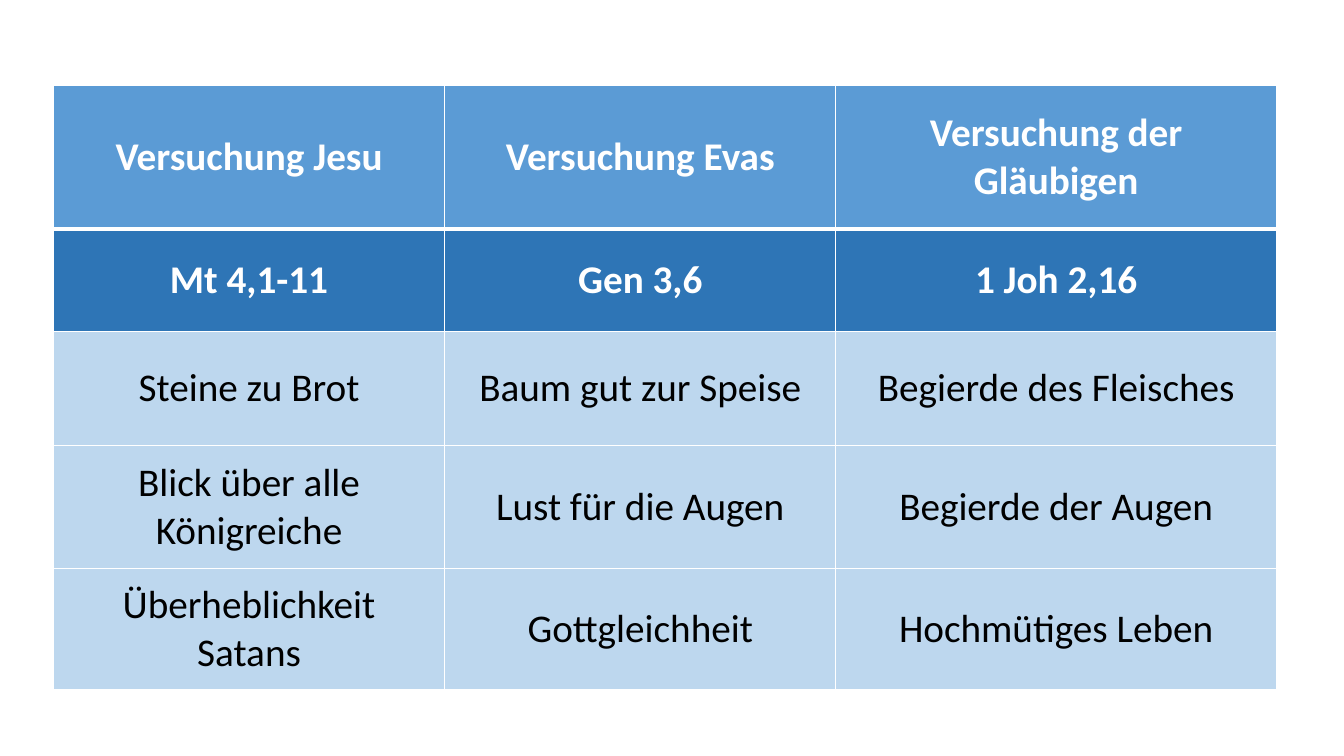
from lxml import etree
from pptx import Presentation, util as u
from pptx.dml.color import RGBColor
from pptx.enum import text
from pptx.oxml.ns import qn

WHITE = RGBColor(0xFF, 0xFF, 0xFF)
BLACK = RGBColor(0, 0, 0)
BLUE = RGBColor(0x5B, 0x9B, 0xD5)
DEEP = RGBColor(0x2E, 0x75, 0xB6)
PALE = RGBColor(0xBD, 0xD7, 0xEE)

HEAD = dict(fill=BLUE, color=WHITE, bold=True)
VERSE = dict(fill=DEEP, color=WHITE, bold=True)
BODY = dict(fill=PALE, color=BLACK, bold=False)

# row height in inches, style, cell texts
ROWS = [
    (1.42, HEAD, ["Versuchung Jesu", "Versuchung Evas", "Versuchung der Gläubigen"]),
    (1.02, VERSE, ["Mt 4,1-11", "Gen 3,6", "1 Joh 2,16"]),
    (1.13, BODY, ["Steine zu Brot", "Baum gut zur Speise", "Begierde des Fleisches"]),
    (1.22, BODY, ["Blick über alle Königreiche", "Lust für die Augen", "Begierde der Augen"]),
    (1.2, BODY, ["Überheblichkeit Satans", "Gottgleichheit", "Hochmütiges Leben"]),
]
COLS = [3.88, 3.88, 4.37]
LEFT, TOP = 0.53, 0.85
THIN, THICK = 1, 3
FORMAT = dict(
    vertical_anchor=text.MSO_ANCHOR.MIDDLE,
    margin_left=u.Inches(0.13), margin_right=u.Inches(0.13),
    margin_top=0, margin_bottom=0,
)


def edge(cell, side, width):
    """Draw one white cell border; side is L, R, T or B."""
    line = etree.SubElement(cell._tc.get_or_add_tcPr(), qn("a:ln" + side),
                            w=str(u.Pt(width)))
    fill = etree.SubElement(line, qn("a:solidFill"))
    etree.SubElement(fill, qn("a:srgbClr"), val=str(WHITE))


def dress(cell, words, style, widths):
    for name, value in FORMAT.items():
        setattr(cell, name, value)
    for side, width in widths.items():
        edge(cell, side, width)
    cell.fill.solid()
    cell.fill.fore_color.rgb = style["fill"]
    para = cell.text_frame.paragraphs[0]
    para.alignment = text.PP_ALIGN.CENTER
    run = para.add_run()
    run.text = words
    font = run.font
    for name, value in dict(name="Calibri", size=u.Pt(28), bold=style["bold"]).items():
        setattr(font, name, value)
    font.color.rgb = style["color"]


def main():
    deck = Presentation()
    deck.slide_width, deck.slide_height = u.Inches(13.33), u.Inches(7.5)
    slide = deck.slides.add_slide(deck.slide_layouts[6])
    size = sum(COLS), sum(row[0] for row in ROWS)
    table = slide.shapes.add_table(
        len(ROWS), len(COLS), *map(u.Inches, (LEFT, TOP, *size))).table
    for col, width in zip(table.columns, COLS):
        col.width = u.Inches(width)
    for r, (height, style, words) in enumerate(ROWS):
        table.rows[r].height = u.Inches(height)
        widths = dict(L=THIN, R=THIN, T=THICK if r == 1 else THIN,
                      B=THICK if r == 0 else THIN)
        for c, word in enumerate(words):
            dress(table.cell(r, c), word, style, widths)
    deck.save("out.pptx")


if __name__ == "__main__":
    main()
